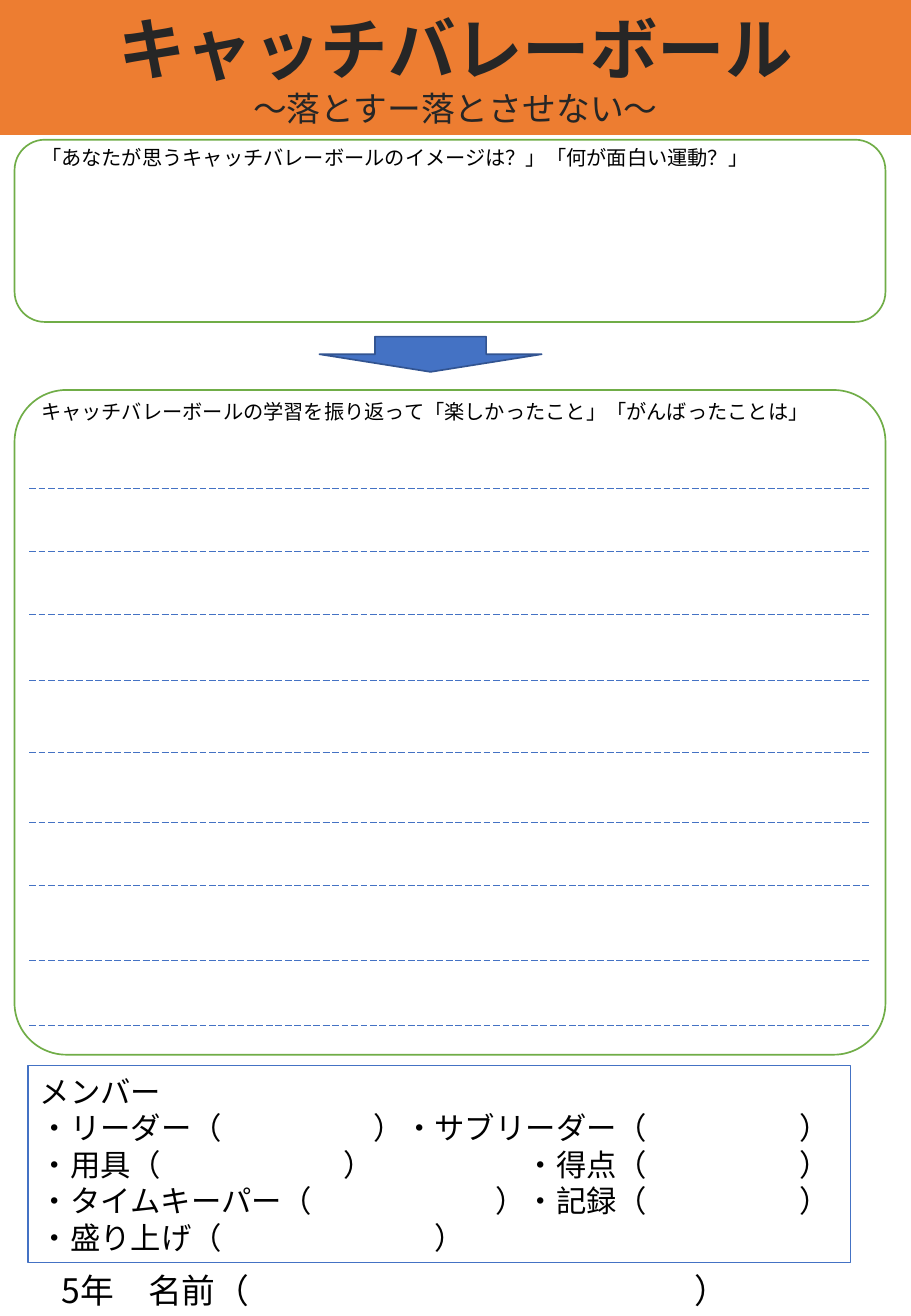
from lxml.etree import SubElement as Sub
from pptx import Presentation
from pptx.dml.color import RGBColor
from pptx.enum.dml import MSO_LINE as Dash
from pptx.enum.shapes import MSO_CONNECTOR as Link, MSO_SHAPE as Kind
from pptx.enum.text import MSO_ANCHOR as Anchor, PP_ALIGN as Align
from pptx.oxml.ns import qn
from pptx.util import Inches, Pt

WIDE, HIGH = 7.5, 10.83
FONT = "Noto Sans CJK JP"
ORANGE, GREEN, BLUE, NAVY = "ED7D31", "70AD47", "4472C4", "325491"
DARK, BLACK, WHITE = "262626", "000000", "FFFFFF"

TITLE = "キャッチバレーボール"
MOTTO = "〜落とすー落とさせない〜"
ASK = "「あなたが思うキャッチバレーボールのイメージは？」「何が面白い運動？」"
REVIEW = "キャッチバレーボールの学習を振り返って「楽しかったこと」「がんばったことは」"
NAME = "5年　名前（\t）"
# Each role line with its tab stops, counted in full-width characters
ROLES = [
    ("メンバー", ()),
    ("・リーダー（\t）・サブリーダー（\t）", (11, 25)),
    ("・用具（\t）\t・得点（\t）", (10, 16, 25)),
    ("・タイムキーパー（\t）・記録（\t）", (15, 25)),
    ("・盛り上げ（\t）", (13,)),
]

EDGE = 0.24
CARD = (0.12, 7.17)
RULES = (4.02, 4.54, 5.06, 5.6, 6.19, 6.77, 7.29, 7.9, 8.44)


def paint(fmt, tone):
    fmt.solid()
    fmt.fore_color.rgb = RGBColor.from_string(tone)


def draw(kind, box, fill=None, edge=None, thick=1):
    shape = slide.shapes.add_shape(kind, *map(Inches, box))
    shape.shadow.inherit = False
    if fill:
        paint(shape.fill, fill)
    else:
        shape.fill.background()
    if edge:
        paint(shape.line.fill, edge)
        shape.line.width = Pt(thick)
    else:
        shape.line.fill.background()
    return shape


def write(shape, rows, tone=BLACK, align=Align.LEFT, anchor=Anchor.TOP):
    """Fill a shape with rows of (text, size, bold, tab stops in characters)."""
    frame = shape.text_frame
    frame.word_wrap = True
    frame.vertical_anchor = anchor
    for i, (text, size, bold, stops) in enumerate(rows):
        para = frame.paragraphs[0] if i == 0 else frame.add_paragraph()
        para.alignment = align
        para.line_spacing = Pt(size * 1.2)
        if stops:
            tabs = Sub(para._p.get_or_add_pPr(), qn("a:tabLst"))
            for stop in stops:
                Sub(tabs, qn("a:tab"), pos=str(int(Pt(size * stop))), algn="l")
        run = para.add_run()
        run.text = text
        run.font.size, run.font.bold, run.font.name = Pt(size), bold, FONT
        paint(run.font.fill, tone)
        Sub(run._r.get_or_add_rPr(), qn("a:ea"), typeface=FONT)


def label(box, text, size, stops=()):
    area = slide.shapes.add_textbox(*map(Inches, box))
    write(area, [(text, size, False, stops)])


def outline(shape, tone, thick):
    """Give every run of the shape a thin outline."""
    for para in shape.text_frame.paragraphs:
        for run in para.runs:
            line = Sub(run._r.get_or_add_rPr(), qn("a:ln"), w=str(int(Pt(thick))))
            Sub(Sub(line, qn("a:solidFill")), qn("a:srgbClr"), val=tone)
            run._r.rPr.insert(0, line)


def rule(y):
    line = slide.shapes.add_connector(
        Link.STRAIGHT, *map(Inches, (EDGE, y, sum(CARD) - 0.12, y)))
    paint(line.line.fill, BLUE)
    line.line.width = Pt(0.5)
    line.line.dash_style = Dash.LONG_DASH
    Sub(line._element.spPr, qn("a:effectLst"))


deck = Presentation()
deck.slide_width, deck.slide_height = Inches(WIDE), Inches(HIGH)
slide = deck.slides.add_slide(deck.slide_layouts[6])

head = draw(Kind.RECTANGLE, (0, 0, WIDE, 1.11), ORANGE)
write(head, [(TITLE, 40, True, ()), (MOTTO, 20, False, ())],
      DARK, Align.CENTER, Anchor.MIDDLE)
outline(head, WHITE, 1.06)

left, span = CARD
draw(Kind.ROUNDED_RECTANGLE, (left, 1.15, span, 1.5), edge=GREEN)
label((EDGE, 1.15, 6.77, 0.3), ASK, 12)
draw(Kind.DOWN_ARROW, (2.63, 2.77, 1.83, 0.29), BLUE, NAVY)

card = draw(Kind.ROUNDED_RECTANGLE, (left, 3.21, span, 5.47), edge=GREEN)
card.adjustments[0] = 0.078
label((EDGE, 3.24, 6.77, 0.3), REVIEW, 12)
for y in RULES:
    rule(y)

team = draw(Kind.RECTANGLE, (0.23, 8.77, 6.77, 1.62), edge=BLUE, thick=0.75)
write(team, [(text, 18, False, stops) for text, stops in ROLES],
      anchor=Anchor.MIDDLE)
label((0.41, 10.4, 6.02, 0.44), NAME, 20, (18.75,))

deck.save("out.pptx")
